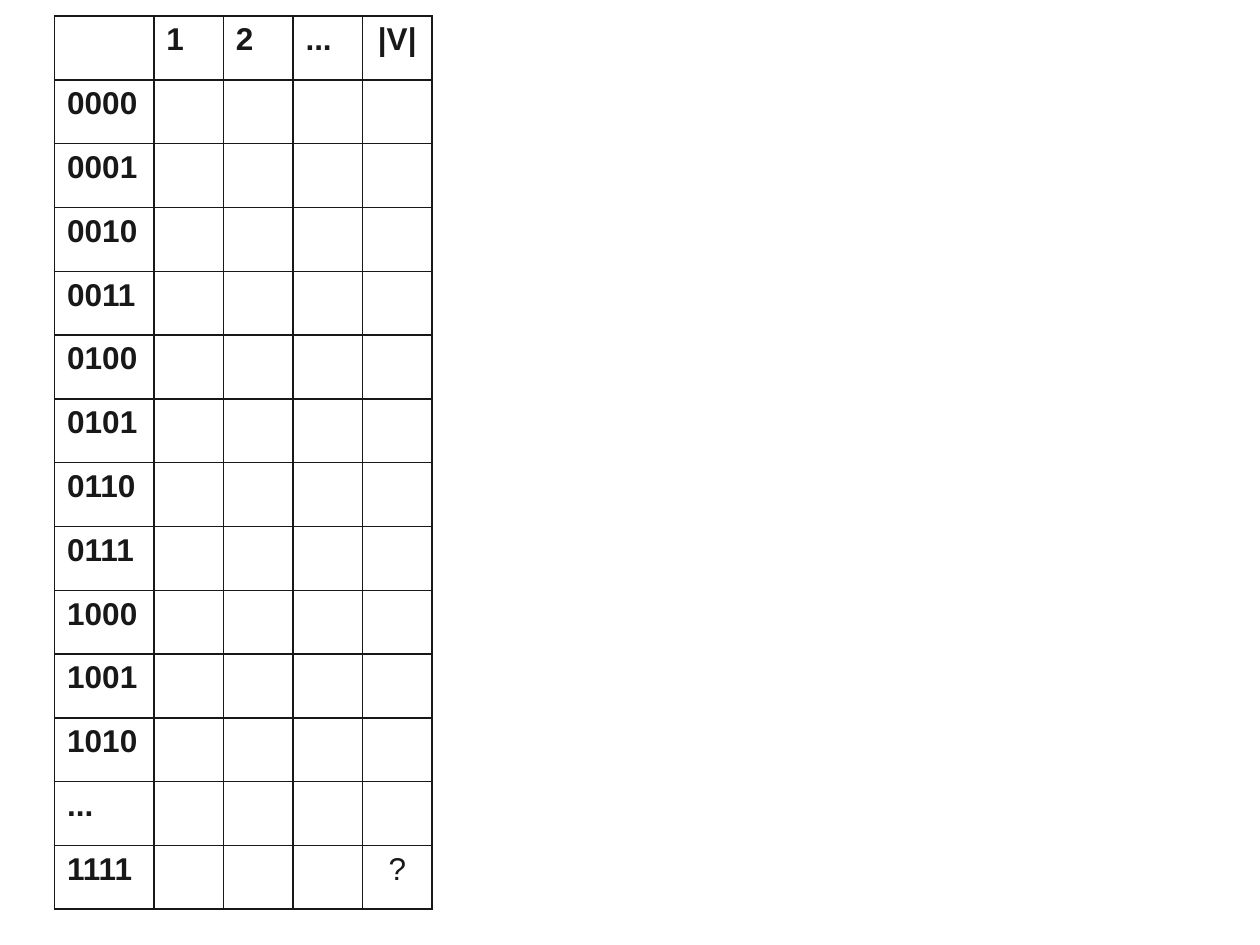
from lxml.etree import SubElement as Sub
from pptx import Presentation
from pptx.dml.color import RGBColor
from pptx.enum.text import PP_ALIGN as Align
from pptx.oxml.ns import qn
from pptx.util import Pt

INK = RGBColor(0x18, 0x18, 0x18)
WHITE = RGBColor(0xFF, 0xFF, 0xFF)
HEADS = ["", "1", "2", "...", "|V|"]
MASKS = [f"{n:04b}" for n in range(11)] + ["...", "1111"]
WIDTHS = [56.7] + [39.75] * 4
HIGH = 36.46


class Deck:
    """Hold the text and line style and the current slide."""

    def __init__(self, slide, font="Arial", size=18, line=1):
        self.slide = slide
        self.font, self.size, self.line = font, size, line

    def text(self, para, words, bold=True, align=None):
        para.alignment = align
        run = para.add_run()
        run.text = words
        font = run.font
        font.name, font.size, font.bold = self.font, Pt(self.size), bold
        font.color.rgb = INK

    def frame(self, cell):
        props = cell._tc.get_or_add_tcPr()
        for side in ("lnL", "lnR", "lnT", "lnB"):
            edge = Sub(props, qn(f"a:{side}"), w=str(Pt(self.line)))
            fill = Sub(edge, qn("a:solidFill"))
            Sub(fill, qn("a:srgbClr"), val=str(INK))
        cell.fill.solid()
        cell.fill.fore_color.rgb = WHITE

    def table(self, rows, left, top, widths, high):
        shape = self.slide.shapes.add_table(
            len(rows), len(widths), Pt(left), Pt(top),
            Pt(sum(widths)), Pt(high * len(rows)))
        grid = shape.table
        grid.first_row = grid.horz_banding = False
        for col, width in zip(grid.columns, widths):
            col.width = Pt(width)
        for row, words in zip(grid.rows, rows):
            row.height = Pt(high)
            for cell, word in zip(row.cells, words):
                self.frame(cell)
                if word:
                    align = Align.CENTER if word in ("|V|", "?") else None
                    self.text(cell.text_frame.paragraphs[0], word,
                              word != "?", align)


def main():
    show = Presentation()
    show.slide_width, show.slide_height = Pt(720), Pt(540)
    deck = Deck(show.slides.add_slide(show.slide_layouts[6]))
    rows = [HEADS] + [[mask, "", "", "", ""] for mask in MASKS]
    rows[-1][-1] = "?"
    deck.table(rows, 31.2, 9.2, WIDTHS, HIGH)
    show.save("out.pptx")


if __name__ == "__main__":
    main()
